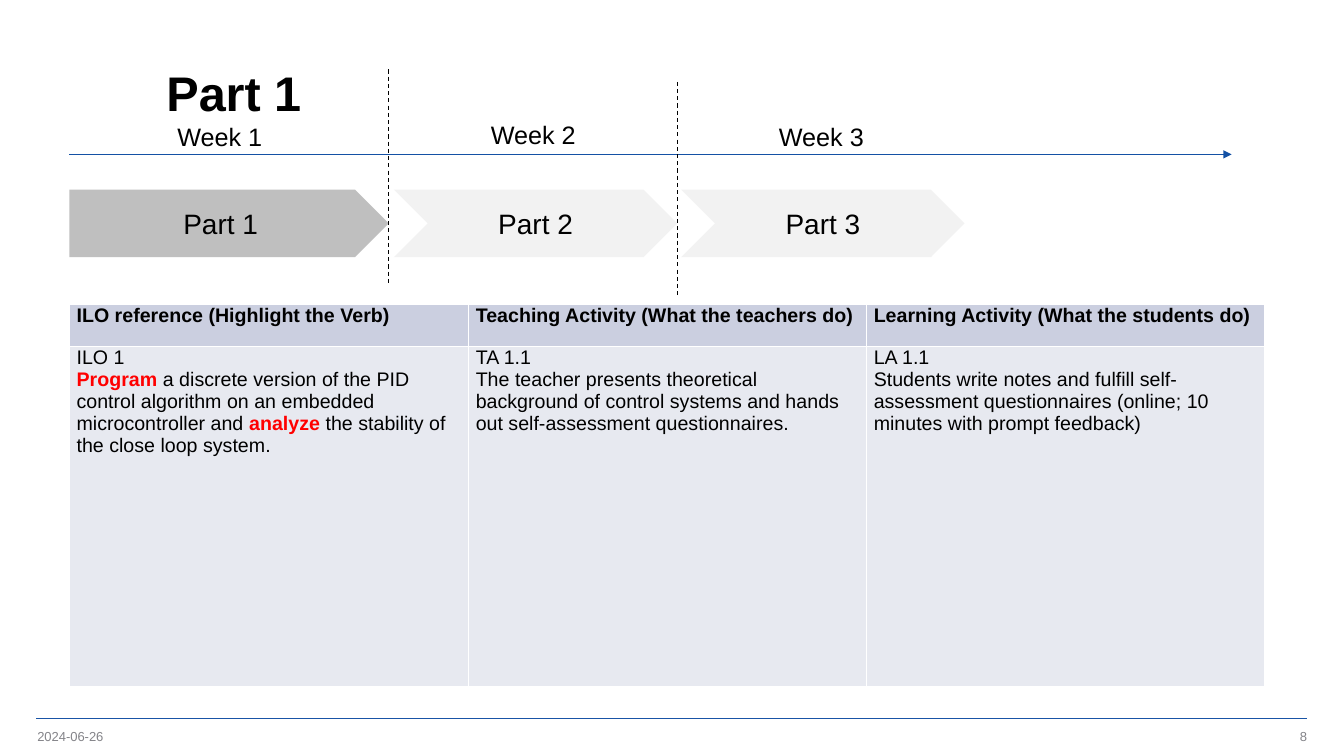
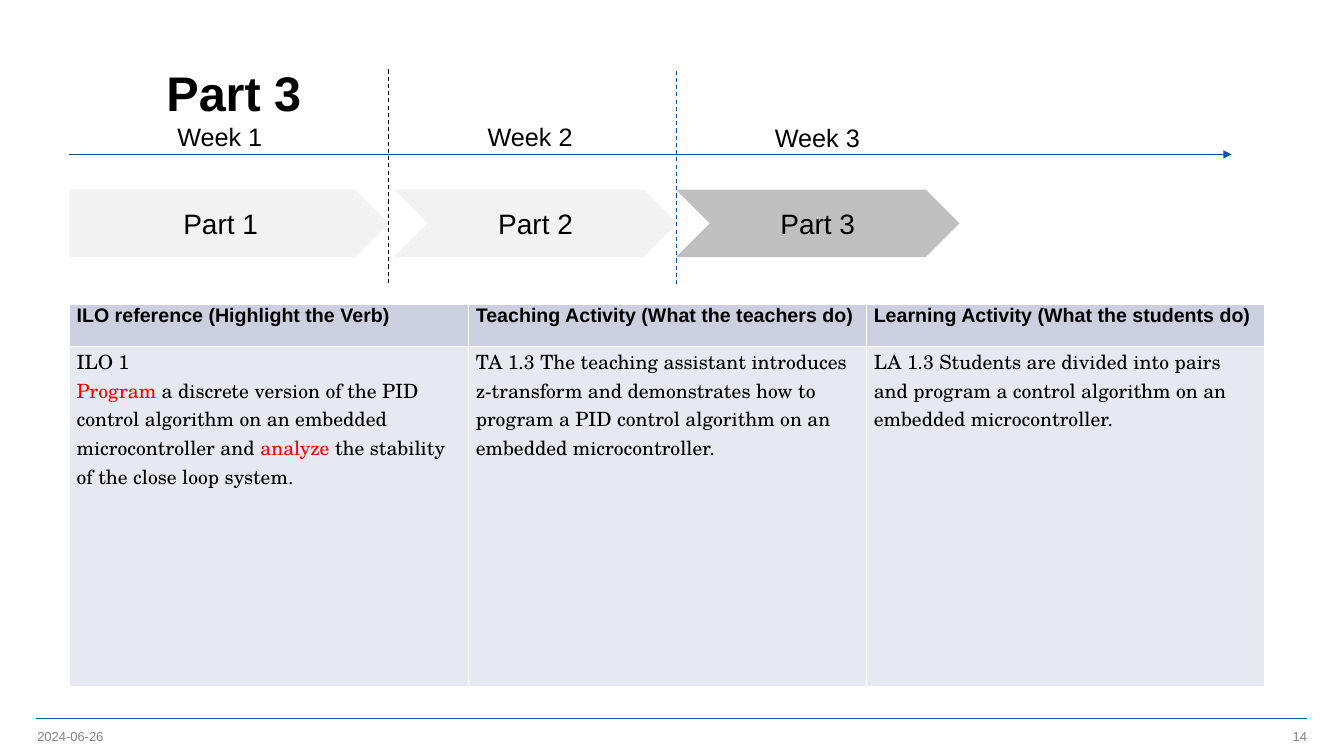
from dataclasses import dataclass

from lxml.etree import SubElement
from pptx import Presentation
from pptx.dml.color import RGBColor
from pptx.enum.dml import MSO_LINE
from pptx.enum.shapes import MSO_CONNECTOR, MSO_SHAPE
from pptx.enum.text import MSO_ANCHOR, PP_ALIGN
from pptx.oxml.ns import qn
from pptx.util import Cm, Pt

COLORS = {
    "black": "000000",
    "white": "FFFFFF",
    "rule": "1954A6",
    "axis": "1451A5",
    "footer": "848489",
    "active": "BFBFBF",
    "idle": "F2F2F2",
    "header": "CBCFE0",
    "body": "E7E9F0",
    "verb": "FF0000",
}
SANS = "Arial"
SERIF = "TeX Gyre Schola"
LEFT = 1.75
STAGE_TOP, STAGE_HEIGHT = 4.78, 1.7
PLATE_WIDTH, CHEVRON_WIDTH = 8.05, 7.14
DIVIDER_LENGTH = 5.45
COLUMN_WIDTHS = (10.06, 10.03, 10.03)
ROW_HEIGHTS = (1.07, 8.56)
HEADINGS = (
    "ILO reference (Highlight the Verb)",
    "Teaching Activity (What the teachers do)",
    "Learning Activity (What the students do)",
)


@dataclass(frozen=True)
class Span:
    text: str
    verb: bool = False


Paragraphs = list[list[Span]]


@dataclass(frozen=True)
class Divider:
    x: float
    top: float
    color: str


@dataclass(frozen=True)
class Week:
    x: float
    top: float


@dataclass(frozen=True)
class StageSlide:
    stage: int
    number: int
    font: str
    bold_verbs: bool
    stage_lefts: tuple[float, ...]
    dividers: tuple[Divider, ...]
    weeks: tuple[Week, ...]
    activities: tuple[Paragraphs, Paragraphs]


OUTCOME: Paragraphs = [
    [Span("ILO 1")],
    [
        Span("Program", True),
        Span(" a discrete version of the PID control algorithm on an embedded microcontroller and "),
        Span("analyze", True),
        Span(" the stability of the close loop system."),
    ],
]

SLIDES = (
    StageSlide(
        1, 8, SANS, True,
        (LEFT, 9.93, 17.17),
        (Divider(9.8, 1.75, "black"), Divider(17.07, 2.06, "black")),
        (Week(4.22, 2.92), Week(12.12, 2.87), Week(19.38, 2.92)),
        (
            [
                [Span("TA 1.1")],
                [Span("The teacher presents theoretical background of control systems "
                      "and hands out self-assessment questionnaires.")],
            ],
            [
                [Span("LA 1.1")],
                [Span("Students write notes and fulfill self-assessment questionnaires "
                      "(online; 10 minutes with prompt feedback)")],
            ],
        ),
    ),
    StageSlide(
        3, 14, SERIF, False,
        (LEFT, 9.93, 17.04),
        (Divider(9.8, 1.75, "black"), Divider(17.04, 1.78, "axis")),
        (Week(4.22, 2.92), Week(12.04, 2.92), Week(19.28, 2.95)),
        (
            [[Span("TA 1.3 The teaching assistant introduces z-transform and demonstrates "
                   "how to program a PID control algorithm on an embedded microcontroller.")]],
            [[Span("LA 1.3 Students are divided into pairs and program a control algorithm "
                   "on an embedded microcontroller.")]],
        ),
    ),
)


def rgb(name: str) -> RGBColor:
    return RGBColor.from_string(COLORS[name])


def add_run(p, text: str, size: float, color: str = "black", font: str = SANS, bold: bool = False) -> None:
    r = p.add_run()
    r.text = text
    r.font.name = font
    r.font.size = Pt(size)
    r.font.bold = bold
    r.font.color.rgb = rgb(color)


def add_line(s, x1: float, y1: float, x2: float, y2: float, color: str,
             width: float = 0.75, dashed: bool = False, arrow: bool = False):
    line = s.shapes.add_connector(MSO_CONNECTOR.STRAIGHT, Cm(x1), Cm(y1), Cm(x2), Cm(y2))
    line.line.color.rgb = rgb(color)
    line.line.width = Pt(width)
    if dashed:
        line.line.dash_style = MSO_LINE.DASH
    properties = line.element.spPr
    if arrow:
        SubElement(properties.find(qn("a:ln")), qn("a:tailEnd"), type="triangle")
    SubElement(properties, qn("a:effectLst"))
    return line


def add_footer(s, x: float, text: str, align: PP_ALIGN) -> None:
    tf = s.shapes.add_textbox(Cm(x), Cm(18.34), Cm(7.62), Cm(0.43)).text_frame
    tf.word_wrap = True
    tf.vertical_anchor = MSO_ANCHOR.MIDDLE
    tf.margin_left = tf.margin_right = tf.margin_top = tf.margin_bottom = 0
    p = tf.paragraphs[0]
    p.alignment = align
    add_run(p, text, 9.3, "footer")


def add_title(s, text: str) -> None:
    title = s.shapes.title
    title.left, title.top, title.width, title.height = Cm(3.94), Cm(0.94), Cm(27.97), Cm(2.49)
    title.text_frame.vertical_anchor = MSO_ANCHOR.MIDDLE
    p = title.text_frame.paragraphs[0]
    p.alignment = PP_ALIGN.LEFT
    p.line_spacing = 1.18
    add_run(p, text, 34.7, bold=True)


def add_stage(s, number: int, x: float, active: bool) -> None:
    first = number == 1
    preset = MSO_SHAPE.PENTAGON if first else MSO_SHAPE.CHEVRON
    width = PLATE_WIDTH if first else CHEVRON_WIDTH
    sp = s.shapes.add_shape(preset, Cm(x), Cm(STAGE_TOP), Cm(width), Cm(STAGE_HEIGHT))
    sp.shadow.inherit = False
    sp.fill.solid()
    sp.fill.fore_color.rgb = rgb("active" if active else "idle")
    sp.line.fill.background()
    sp.text_frame.vertical_anchor = MSO_ANCHOR.MIDDLE
    p = sp.text_frame.paragraphs[0]
    p.alignment = PP_ALIGN.CENTER
    add_run(p, f"Part {number}", 20)


def add_week(s, number: int, week: Week) -> None:
    tf = s.shapes.add_textbox(Cm(week.x), Cm(week.top), Cm(2.67), Cm(1.02)).text_frame
    tf.word_wrap = False
    add_run(tf.paragraphs[0], f"Week {number}", 18)


def format_cell(cell, fill: str) -> None:
    properties = cell._tc.get_or_add_tcPr()
    for side in ("lnL", "lnR", "lnT", "lnB"):
        border = SubElement(properties, qn(f"a:{side}"), w=str(Pt(1)))
        solid = SubElement(border, qn("a:solidFill"))
        SubElement(solid, qn("a:srgbClr"), val=COLORS["white"])
    cell.fill.solid()
    cell.fill.fore_color.rgb = rgb(fill)
    cell.margin_left = cell.margin_right = Cm(0.18)
    cell.margin_top = cell.margin_bottom = 0


def add_activity_table(s, content: StageSlide) -> None:
    table = s.shapes.add_table(2, 3, Cm(LEFT), Cm(7.67), Cm(sum(COLUMN_WIDTHS)), Cm(sum(ROW_HEIGHTS))).table
    table.first_row = table.horz_banding = False
    for row, height in zip(table.rows, ROW_HEIGHTS):
        row.height = Cm(height)
    for i, (heading, paragraphs) in enumerate(zip(HEADINGS, (OUTCOME, *content.activities))):
        table.columns[i].width = Cm(COLUMN_WIDTHS[i])
        header, body = table.cell(0, i), table.cell(1, i)
        format_cell(header, "header")
        format_cell(body, "body")
        add_run(header.text_frame.paragraphs[0], heading, 14, bold=True)
        tf = body.text_frame
        for j, spans in enumerate(paragraphs):
            p = tf.add_paragraph() if j else tf.paragraphs[0]
            for span in spans:
                add_run(p, span.text, 14, "verb" if span.verb else "black",
                        content.font, span.verb and content.bold_verbs)


def add_stage_slide(prs, layout, content: StageSlide):
    s = prs.slides.add_slide(layout)
    add_title(s, f"Part {content.stage}")
    add_footer(s, 0.94, "2024-06-26", PP_ALIGN.LEFT)
    add_footer(s, 25.32, str(content.number), PP_ALIGN.RIGHT)
    add_activity_table(s, content)
    add_line(s, LEFT, 3.89, 31.04, 3.89, "axis", arrow=True)
    for number, x in enumerate(content.stage_lefts, 1):
        add_stage(s, number, x, number == content.stage)
    for divider in content.dividers:
        add_line(s, divider.x, divider.top, divider.x, divider.top + DIVIDER_LENGTH, divider.color, dashed=True)
    for number, week in enumerate(content.weeks, 1):
        add_week(s, number, week)
    return s


def main() -> None:
    prs = Presentation()
    prs.slide_width, prs.slide_height = Cm(33.87), Cm(19.05)
    layout = prs.slide_layouts[5]
    slides = [add_stage_slide(prs, layout, content) for content in SLIDES]
    rule = add_line(slides[0], 0.91, 18.11, 32.94, 18.11, "rule", width=1)
    layout.shapes.element.append(rule.element)
    prs.save("out.pptx")


if __name__ == "__main__":
    main()
